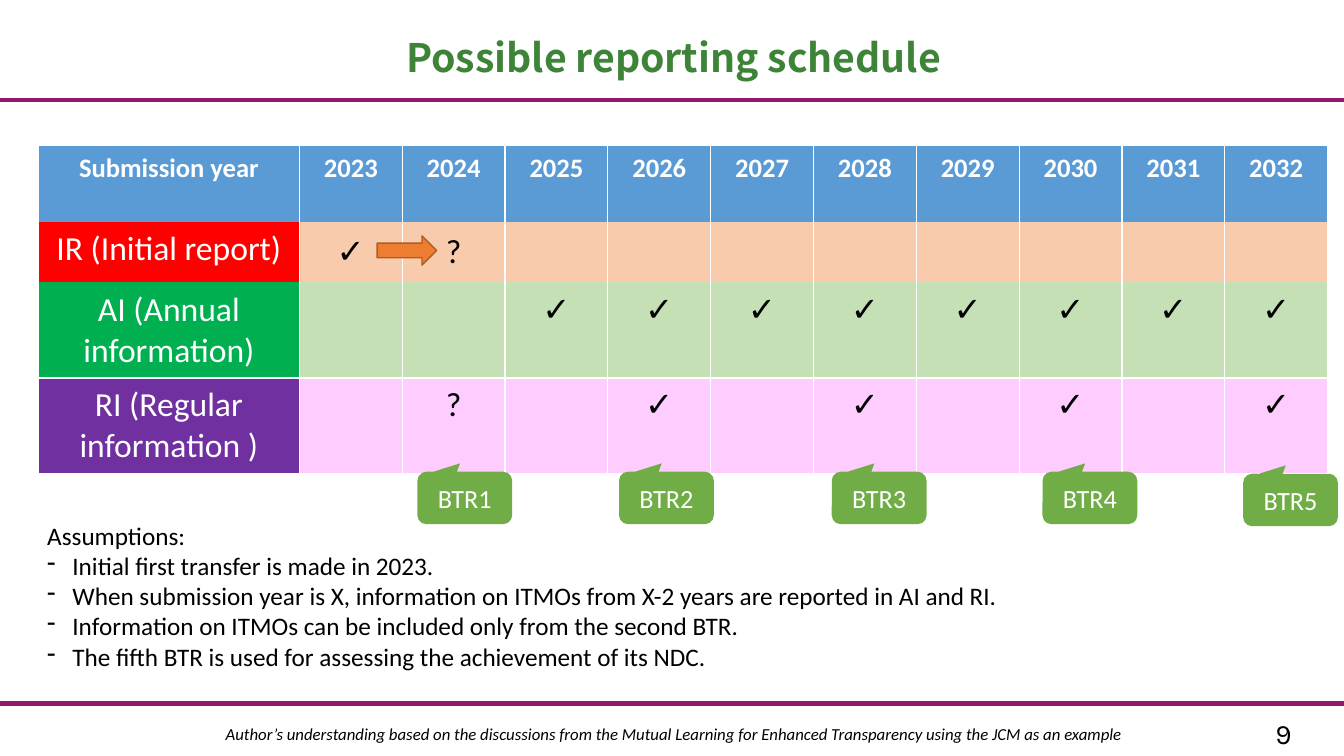
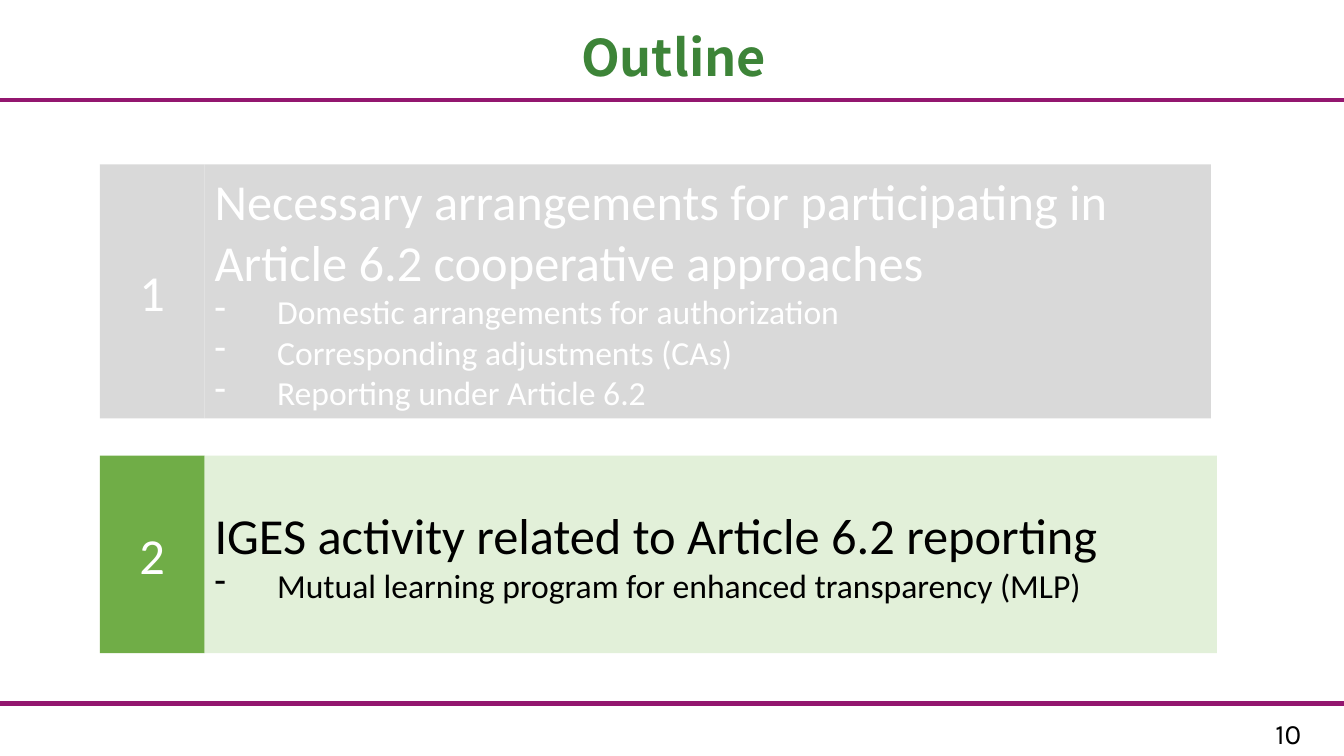
from lxml import etree
from pptx import Presentation, util as u
from pptx.dml.color import RGBColor
from pptx.enum import shapes as es, text as et
from pptx.oxml.ns import qn

PX = 9144  # 100 px to the inch
SANS, HEAD, NUM = "Calibri", "Noto Sans CJK JP", "Karla"
WHITE, BLACK, GREEN, PLUM, LEAF = "FFFFFF", "000000", "3D8438", "93166F", "70AD47"
KIND, ALIGN, ANCHOR = es.MSO_SHAPE, et.PP_ALIGN, et.MSO_ANCHOR
PLAIN = "{2D5ABB26-0587-4C30-8999-92F81FD0307C}"  # table style without a grid


def rgb(code):
    return RGBColor.from_string(code)


def emu(*vals):
    return [u.Emu(v * PX) for v in vals]


def style(para, size, color=BLACK, face=SANS, bold=False, italic=False, align=None):
    para.alignment = align
    for run in para.runs:
        font = run.font
        font.size, font.name = u.Pt(size), face
        font.bold, font.italic = bold, italic
        font.color.rgb = rgb(color)


def dash(para, indent):
    props = para._p.get_or_add_pPr()
    props.set("marL", str(indent * PX))
    props.set("indent", str(-indent * PX))
    etree.SubElement(props, qn("a:buChar")).set("char", "-")


def listing(frame, head, items, sizes, indent, color=BLACK):
    """A heading paragraph followed by dashed items."""
    frame.text = head
    style(frame.paragraphs[0], sizes[0], color, align=ALIGN.LEFT)
    for item in items:
        para = frame.add_paragraph()
        para.text = item
        dash(para, indent)
        style(para, sizes[1], color, align=ALIGN.LEFT)


def label(slide, box, words, size, **look):
    frame = slide.shapes.add_textbox(*emu(*box)).text_frame
    frame.word_wrap = True
    frame.text = words
    style(frame.paragraphs[0], size, **look)
    return frame


def block(shapes, kind, box, fill, line=None):
    shape = shapes.add_shape(kind, *emu(*box))
    shape.shadow.inherit = False
    shape.fill.solid()
    shape.fill.fore_color.rgb = rgb(fill)
    if line:
        shape.line.color.rgb = rgb(line)
        shape.line.width = u.Pt(1)
    else:
        shape.line.fill.background()
    shape.text_frame.vertical_anchor = ANCHOR.MIDDLE
    return shape


def tag(shape, words, size):
    shape.text_frame.text = words
    style(shape.text_frame.paragraphs[0], size, WHITE, align=ALIGN.CENTER)


def base(deck, words, size, page):
    """A slide with its title, two rules and page number."""
    slide = deck.slides.add_slide(deck.slide_layouts[5])
    for y in (99, 698):
        rule = slide.shapes.add_connector(es.MSO_CONNECTOR.STRAIGHT, *emu(0, y, 1333, y))
        rule.line.color.rgb = rgb(PLUM)
        rule.line.width = u.Pt(3)
        etree.SubElement(rule._element.spPr, qn("a:effectLst"))
    title = slide.shapes.title
    title.left, title.top, title.width, title.height = emu(68, 29, 1200, 61)
    frame = title.text_frame
    frame.text = words
    frame.auto_size = et.MSO_AUTO_SIZE.NONE
    frame.vertical_anchor = ANCHOR.MIDDLE
    frame.paragraphs[0].line_spacing = 0.9
    style(frame.paragraphs[0], size, GREEN, HEAD, bold=True, align=ALIGN.CENTER)
    label(slide, (1255, 706, 79, 44), str(page), 20, face=NUM)
    return slide


def edge(cell, sides):
    props = cell._tc.get_or_add_tcPr()
    for side in sides:
        line = etree.SubElement(props, qn("a:ln" + side), w=str(u.Pt(1)))
        fill = etree.SubElement(line, qn("a:solidFill"))
        etree.SubElement(fill, qn("a:srgbClr"), val=WHITE)


def grid(slide, x, y):
    """The years table: rows of name, head fill, body fill, marks by year."""
    years = range(2023, 2033)
    rows = [
        ("Submission year", "5B9BD5", "5B9BD5", {n: str(n) for n in years}, 76, "LRT"),
        ("IR (Initial report)", "FF0000", "F8CBAD", {2023: "✓", 2024: "?"}, 60, "LR"),
        ("AI (Annual information)", "00B050", "C5E0B4",
         {n: "✓" for n in years[2:]}, 95, "LRB"),
        ("RI (Regular information )", "7030A0", "FFCCFF",
         {2024: "?", **{n: "✓" for n in years[3::2]}}, 95, "LRTB"),
    ]
    wide = [259] + [102] * len(years)
    tall = [row[4] for row in rows]
    shape = slide.shapes.add_table(len(rows), len(wide), *emu(x, y, sum(wide), sum(tall)))
    table = shape.table
    table.first_row = table.horz_banding = False
    table._tbl.tblPr.find(qn("a:tableStyleId")).text = PLAIN
    for col, width in zip(table.columns, wide):
        col.width = u.Emu(width * PX)
    for r, (name, dark, pale, marks, height, sides) in enumerate(rows):
        table.rows[r].height = u.Emu(height * PX)
        texts = [name] + [marks.get(n, "") for n in years]
        for c, words in enumerate(texts):
            cell = table.cell(r, c)
            edge(cell, sides)
            cell.fill.solid()
            cell.fill.fore_color.rgb = rgb(pale if c else dark)
            cell.margin_left, cell.margin_right = emu(13, 13)
            cell.margin_top, cell.margin_bottom = emu(7, 7)
            if r == 1 and c:
                cell.vertical_anchor = ANCHOR.MIDDLE
            cell.text = words
            style(cell.text_frame.paragraphs[0], 24 if r else 19,
                  BLACK if r and c else WHITE, bold=r == 0, align=ALIGN.CENTER)


def callout(slide, x, y, words):
    shape = block(slide.shapes, KIND.ROUNDED_RECTANGULAR_CALLOUT, (x, y, 94, 52), LEAF)
    for n, value in enumerate((-0.05, -0.66, 0.17)):
        shape.adjustments[n] = value
    tag(shape, words, 18.7)


def schedule(deck):
    slide = base(deck, "Possible reporting schedule", 28, 9)
    grid(slide, 38, 144)
    # Assumptions
    notes = label(slide, (37, 511, 1205, 162), "", 18)
    listing(notes, "Assumptions:", [
        "Initial first transfer is made in 2023.",
        "When submission year is X, information on ITMOs from X-2 years "
        "are reported in AI and RI.",
        "Information on ITMOs can be included only from the second BTR.",
        "The fifth BTR is used for assessing the achievement of its NDC.",
    ], (18, 18), 25)
    # Shift from 2023 to 2024, and the BTR marks
    block(slide.shapes, KIND.RIGHT_ARROW, (374, 234, 59, 29), "ED7D31", "AF5C24")
    spots = [(414, 468), (614, 468), (825, 468), (1034, 468), (1233, 470)]
    for n, (x, y) in enumerate(spots, 1):
        callout(slide, x, y, f"BTR{n}")
    # Source line
    label(slide, (214, 713, 940, 30),
          "Author’s understanding based on the discussions from the Mutual Learning for "
          "Enhanced Transparency using the JCM as an example", 12, italic=True)


def card(slide, box, num, head, items, dark, pale, ink):
    """A numbered side panel joined to a text panel."""
    x, y, w, h = box
    side = 104
    parts = slide.shapes.add_group_shape().shapes
    tag(block(parts, KIND.RECTANGLE, (x, y, side, h), dark), str(num), 36)
    panel = block(parts, KIND.RECTANGLE, (x + side, y, w - side, h), pale)
    listing(panel.text_frame, head, items, (36, 24), 62, ink)


def outline(deck):
    slide = base(deck, "Outline", 36, 10)
    card(slide, (99, 163, 1102, 252), 1,
         "Necessary arrangements for participating in Article 6.2 cooperative approaches",
         ["Domestic arrangements for authorization", "Corresponding adjustments (CAs)",
          "Reporting under Article 6.2"], "D9D9D9", "D9D9D9", WHITE)
    card(slide, (99, 452, 1108, 196), 2, "IGES activity related to Article 6.2 reporting",
         ["Mutual learning program for enhanced transparency (MLP)"],
         LEAF, "E2F0D9", BLACK)


def main():
    deck = Presentation()
    deck.slide_width, deck.slide_height = u.Inches(13.33), u.Inches(7.5)
    schedule(deck)
    outline(deck)
    deck.save("out.pptx")


if __name__ == "__main__":
    main()
